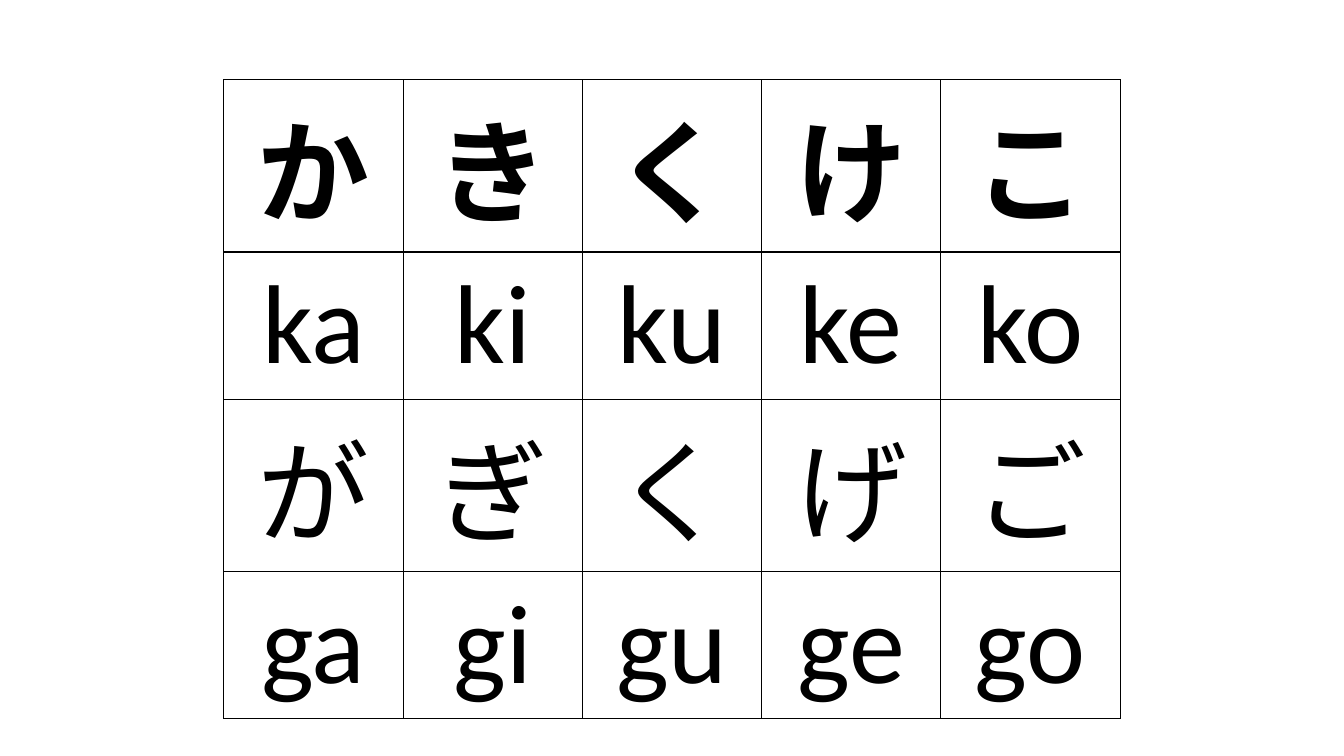
"""Build a hiragana chart slide for the k and g syllables."""
from lxml.etree import SubElement
from pptx import Presentation
from pptx.dml.color import RGBColor
from pptx.enum.text import PP_ALIGN
from pptx.oxml.ns import qn
from pptx.util import Inches, Pt

COLORS = {"ink": "000000", "paper": "FFFFFF"}
SYLLABLES = ["か き く け こ", "ka ki ku ke ko", "が ぎ く げ ご", "ga gi gu ge go"]
KANA_HEIGHT, ROMAJI_HEIGHT = Inches(1.7), Inches(1.46)


def add_borders(cell):
    properties = cell._tc.get_or_add_tcPr()
    for side in ("lnL", "lnR", "lnT", "lnB"):
        border = SubElement(properties, qn(f"a:{side}"), w=str(Pt(1)))
        fill = SubElement(border, qn("a:solidFill"))
        SubElement(fill, qn("a:srgbClr"), val=COLORS["ink"])


prs = Presentation()
prs.slide_width, prs.slide_height = Inches(13.33), Inches(7.5)
slide = prs.slides.add_slide(prs.slide_layouts[6])

chart = slide.shapes.add_table(
    4, 5, Inches(2.22), Inches(0.79), Inches(8.89), 2 * (KANA_HEIGHT + ROMAJI_HEIGHT)
).table
chart.horz_banding = False

for row_index, line in enumerate(SYLLABLES):
    chart.rows[row_index].height = ROMAJI_HEIGHT if row_index % 2 else KANA_HEIGHT
    for column_index, syllable in enumerate(line.split()):
        cell = chart.cell(row_index, column_index)
        add_borders(cell)
        cell.fill.solid()
        cell.fill.fore_color.rgb = RGBColor.from_string(COLORS["paper"])
        cell.text = syllable
        paragraph = cell.text_frame.paragraphs[0]
        paragraph.alignment = PP_ALIGN.CENTER
        paragraph.font.name = "Calibri"
        paragraph.font.size = Pt(80)
        paragraph.font.bold = row_index == 0
        paragraph.font.color.rgb = RGBColor.from_string(COLORS["ink"])

prs.save("out.pptx")
